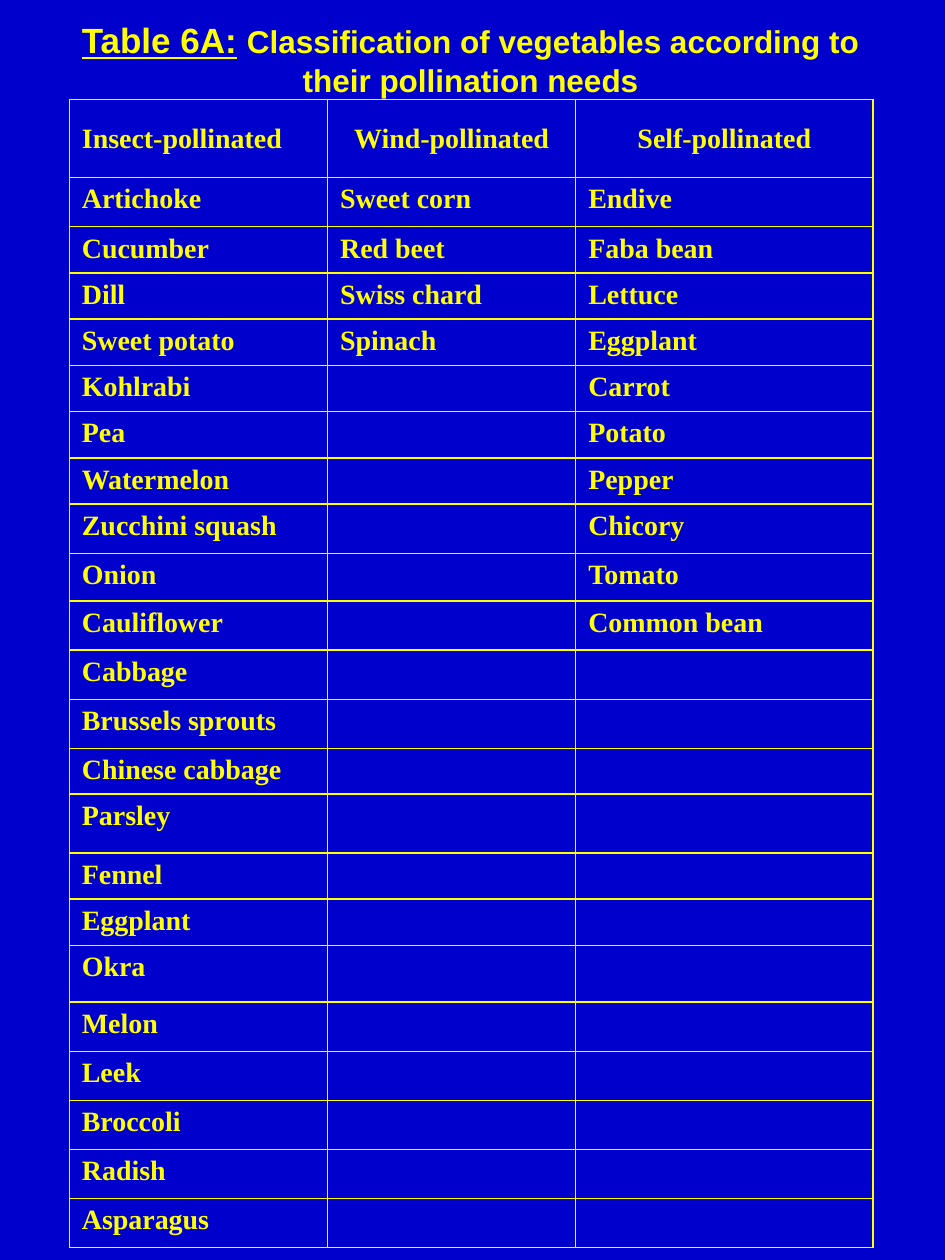
from itertools import zip_longest

from lxml.etree import SubElement
from pptx import Presentation
from pptx.dml.color import RGBColor
from pptx.enum.text import MSO_ANCHOR as Anchor, PP_ALIGN as Align
from pptx.oxml.ns import qn
from pptx.util import Inches, Pt

BLUE = RGBColor(0x00, 0x00, 0xCC)
YELLOW = RGBColor(0xFF, 0xFF, 0x00)
TITLE_FONT = "Arial"
TABLE_FONT = "Times New Roman"
TABLE_SIZE = 16

COLUMN_WIDTHS = [2.05, 1.97, 2.36]
TABLE_LEFT = 0.55
HEADINGS = ["Insect-pollinated", "Wind-pollinated", "Self-pollinated"]
INSECT = ["Artichoke", "Cucumber", "Dill", "Sweet potato", "Kohlrabi", "Pea",
          "Watermelon", "Zucchini squash", "Onion", "Cauliflower", "Cabbage",
          "Brussels sprouts", "Chinese cabbage"]
WIND = ["Sweet corn", "Red beet", "Swiss chard", "Spinach"]
SELF = ["Endive", "Faba bean", "Lettuce", "Eggplant", "Carrot", "Potato",
        "Pepper", "Chicory", "Tomato", "Common bean"]
MORE_INSECT = ["Parsley", "Fennel", "Eggplant", "Okra", "Melon", "Leek",
               "Broccoli", "Radish", "Asparagus"]
UPPER_HEIGHTS = [0.62, 0.39, 0.35, 0.29, 0.32, 0.35, 0.3, 0.35, 0.39, 0.38,
                 0.39, 0.39, 0.39, 0.31]
LOWER_HEIGHTS = [0.47, 0.31, 0.34, 0.45] + [0.39] * 5


def style_span(span, font, size):
    span.font.name = font
    span.font.size = Pt(size)
    span.font.bold = True
    span.font.color.rgb = YELLOW


def add_title(page):
    box = page.shapes.add_textbox(Inches(0.36), Inches(0.06),
                                  Inches(6.75), Inches(0.81))
    frame = box.text_frame
    frame.word_wrap = True
    frame.vertical_anchor = Anchor.MIDDLE
    para = frame.paragraphs[0]
    para.alignment = Align.CENTER
    for text, size, underline in [
        ("Table 6A:", 20, True),
        (" ", 20, False),
        ("Classification of vegetables according to their pollination needs",
         18, False),
    ]:
        span = para.add_run()
        span.text = text
        style_span(span, TITLE_FONT, size)
        span.font.underline = underline


def add_borders(cell):
    properties = cell._tc.get_or_add_tcPr()
    for side in ("lnL", "lnR", "lnT", "lnB"):
        line = SubElement(properties, qn(f"a:{side}"), w=str(Pt(1)))
        fill = SubElement(line, qn("a:solidFill"))
        SubElement(fill, qn("a:srgbClr"), val=str(YELLOW))


def fill_cell(cell, text):
    add_borders(cell)
    cell.fill.background()
    para = cell.text_frame.paragraphs[0]
    if text:
        para.text = text
        style_span(para.runs[0], TABLE_FONT, TABLE_SIZE)
    else:
        # Keeps empty cells from stretching their row
        SubElement(para._p, qn("a:endParaRPr"), sz=str(TABLE_SIZE * 100))


def add_grid(page, top, rows, heights):
    frame = page.shapes.add_table(
        len(rows), len(COLUMN_WIDTHS), Inches(TABLE_LEFT), Inches(top),
        Inches(sum(COLUMN_WIDTHS)), Inches(sum(heights)))
    table = frame.table
    table.first_row = False
    table.horz_banding = False
    for column, width in zip(table.columns, COLUMN_WIDTHS):
        column.width = Inches(width)
    for row, height, texts in zip(table.rows, heights, rows):
        row.height = Inches(height)
        for cell, text in zip(row.cells, texts):
            fill_cell(cell, text)
    return table


def main():
    deck = Presentation()
    deck.slide_width = Inches(7.5)
    deck.slide_height = Inches(10)
    page = deck.slides.add_slide(deck.slide_layouts[6])
    page.background.fill.solid()
    page.background.fill.fore_color.rgb = BLUE

    add_title(page)

    # Upper table with headings
    vegetables = list(zip_longest(INSECT, WIND, SELF, fillvalue=""))
    upper = add_grid(page, 0.79, [HEADINGS] + vegetables, UPPER_HEIGHTS)
    for index, cell in enumerate(upper.rows[0].cells):
        cell.vertical_anchor = Anchor.MIDDLE
        if index > 0:
            cell.text_frame.paragraphs[0].alignment = Align.CENTER

    # Lower table continues the insect-pollinated column
    add_grid(page, 6.3, [(name, "", "") for name in MORE_INSECT],
             LOWER_HEIGHTS)

    deck.save("out.pptx")


if __name__ == "__main__":
    main()
